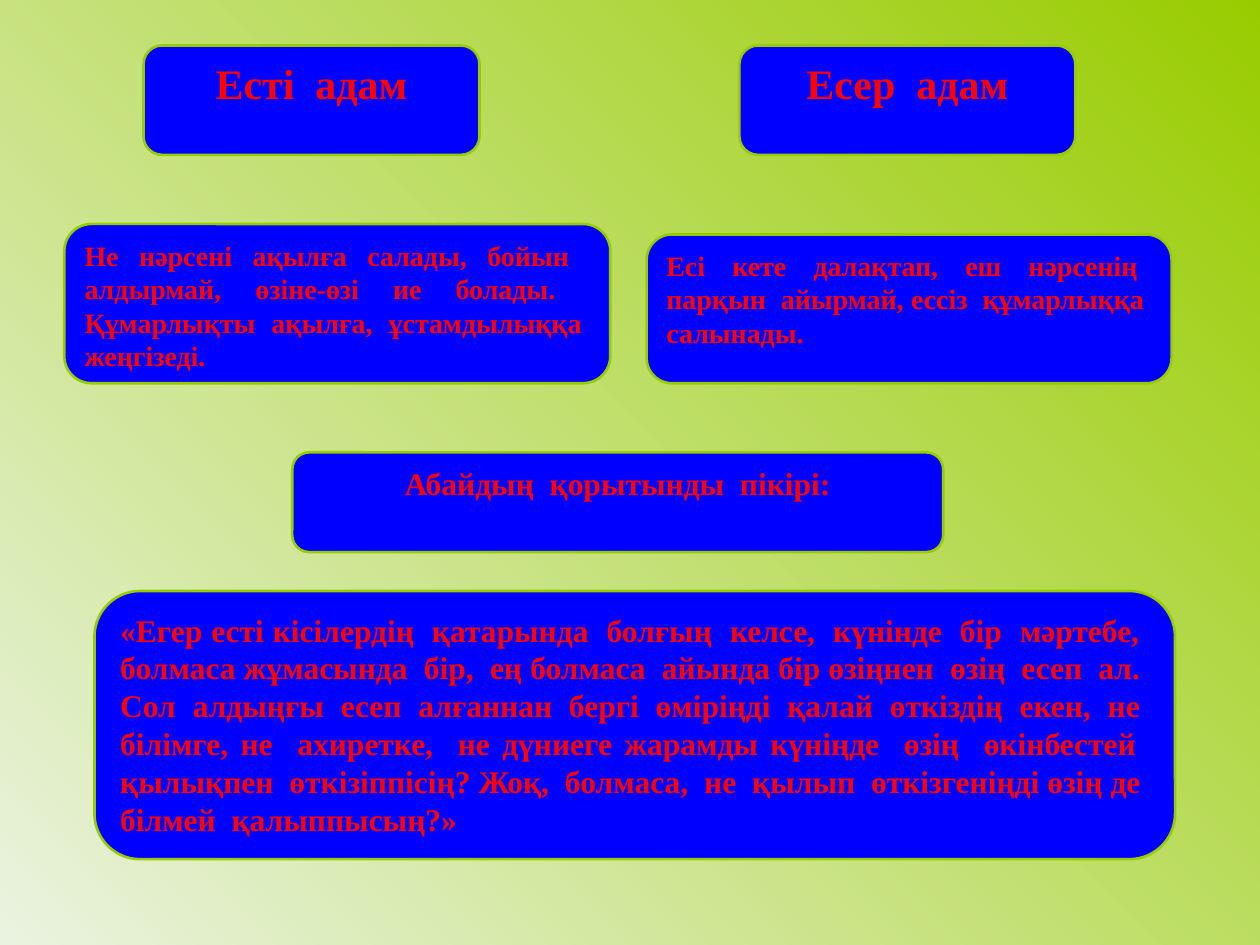
import pptx
import pptx.dml.color
import pptx.enum.shapes
import pptx.enum.text
import pptx.util

Pt = pptx.util.Pt
ALIGN = pptx.enum.text.PP_ALIGN
COLOURS = {"panel": "0000FF", "edge": "99CC00", "text": "FF0000", "pale": "EAF3E0"}


class Board:
    """Holds the shared style and the slide being filled."""

    font_name = "Times New Roman"

    def __init__(self, deck):
        self.slide = deck.slides.add_slide(deck.slide_layouts[6])

    def colour(self, key):
        return pptx.dml.color.RGBColor.from_string(COLOURS[key])

    def backdrop(self, start, end, angle):
        fill = self.slide.background.fill
        fill.gradient()
        fill.gradient_angle = angle
        for stop, key in zip(fill.gradient_stops, (start, end)):
            stop.color.rgb = self.colour(key)

    def panel(self, left, top, width, height, wording, size, align):
        panel = self.slide.shapes.add_shape(
            pptx.enum.shapes.MSO_SHAPE.ROUNDED_RECTANGLE,
            Pt(left), Pt(top), Pt(width), Pt(height))
        panel.shadow.inherit = False
        panel.adjustments[0] = 0.17
        panel.fill.solid()
        panel.fill.fore_color.rgb = self.colour("panel")
        panel.line.color.rgb = self.colour("edge")
        panel.line.width = Pt(1.5)
        frame = panel.text_frame
        frame.word_wrap = True
        frame.vertical_anchor = pptx.enum.text.MSO_ANCHOR.TOP
        paragraph = frame.paragraphs[0]
        paragraph.text = wording
        paragraph.alignment = align
        paragraph.font.name = self.font_name
        paragraph.font.size = Pt(size)
        paragraph.font.bold = True
        paragraph.font.color.rgb = self.colour("text")

    def heading(self, left, top, width, height, wording, size):
        self.panel(left, top, width, height, wording, size, ALIGN.CENTER)

    def passage(self, left, top, width, height, wording, size):
        self.panel(left, top, width, height, wording, size, ALIGN.JUSTIFY)


def main():
    deck = pptx.Presentation()
    deck.slide_width, deck.slide_height = Pt(720), Pt(540)
    board = Board(deck)
    board.backdrop("edge", "pale", 225)

    for left, person in ((82, "Есті  адам"), (422.5, "Есер  адам")):
        board.heading(left, 26, 192, 62.5, person, 24)

    wise = ("Не нәрсені ақылға салады, бойын  алдырмай, өзіне-өзі ие болады.  "
            "Құмарлықты  ақылға,  ұстамдылыққа  жеңгізеді.")
    reckless = ("Есі  кете  далақтап,  еш  нәрсенің  парқын  айырмай, "
                "ессіз  құмарлыққа  салынады.")
    board.passage(36.75, 128, 312, 91, wise, 16)
    board.passage(369.5, 134, 300, 85, reckless, 16)

    advice = (
        "«Егер есті кісілердің  қатарында  болғың  келсе,  күнінде  бір  мәртебе,  "
        "болмаса жұмасында  бір,  ең болмаса  айында бір өзіңнен  өзің  есеп  ал.  "
        "Сол  алдыңғы  есеп  алғаннан  бергі  өміріңді  қалай  өткіздің  екен,  не  "
        "білімге, не  ахиретке,  не дүниеге жарамды күніңде  өзің  өкінбестей  "
        "қылықпен  өткізіппісің? Жоқ,  болмаса,  не  қылып  өткізгеніңді өзің де  "
        "білмей  қалыппысың?»")
    board.heading(167, 258.5, 372, 57, "Абайдың  қорытынды  пікірі:", 18)
    board.passage(54, 337.75, 617.5, 153.25, advice, 18)

    deck.save("out.pptx")


if __name__ == "__main__":
    main()
